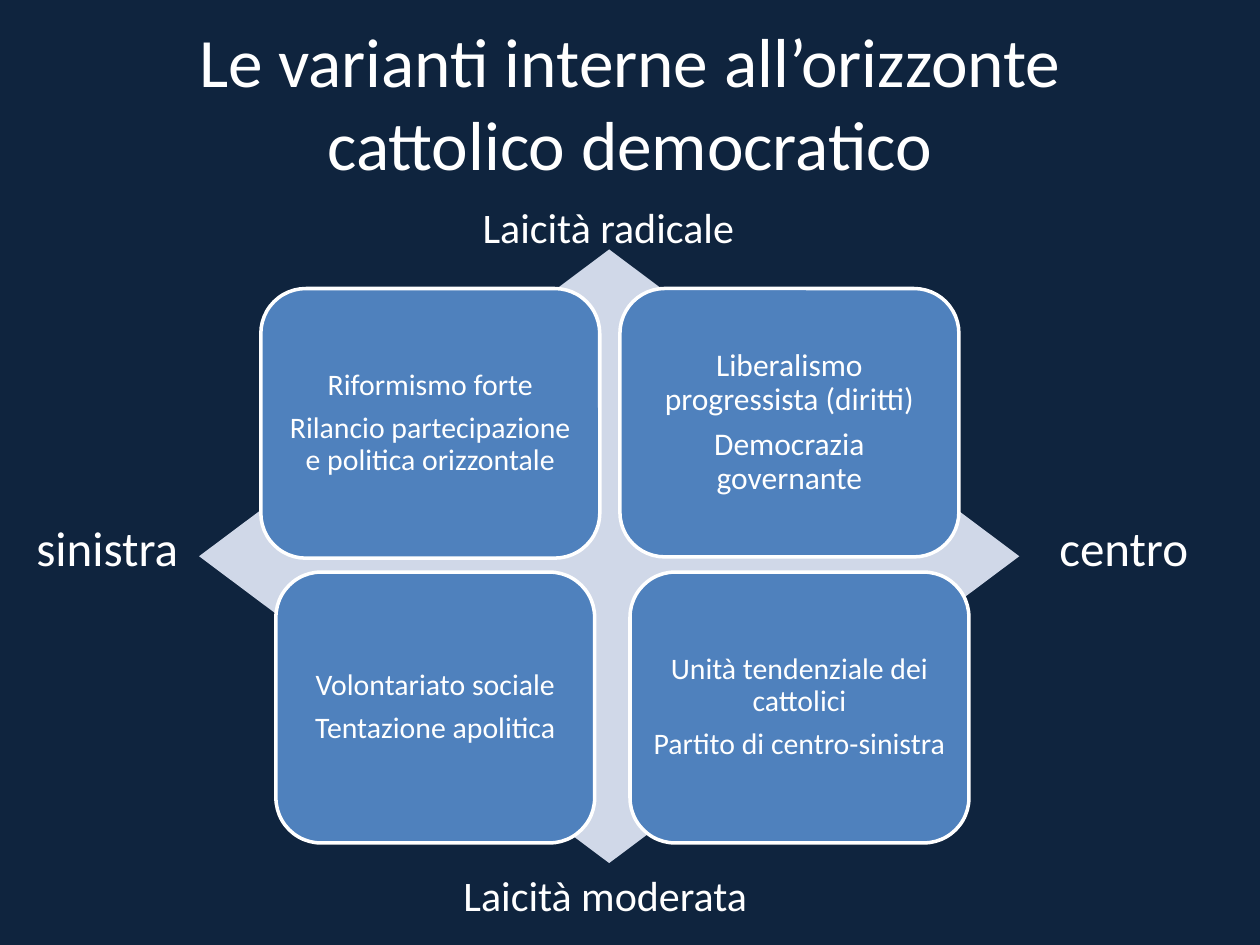
import pptx
import pptx.dml.color
import pptx.enum.shapes
import pptx.enum.text
import pptx.util

# The slide is a grid of square cells
COLUMNS, ROWS = 100, 75
CELL = pptx.util.Inches(0.1)

NAVY, WHITE, BLUE, PALE = "0F243E", "FFFFFF", "4F81BD", "D0D8E8"
FONT = "Calibri"
SHAPE = pptx.enum.shapes.MSO_SHAPE
CENTER = pptx.enum.text.PP_ALIGN.CENTER
MIDDLE = pptx.enum.text.MSO_ANCHOR.MIDDLE

# Quadrants: column, row, width, height, text size, paragraphs
QUADRANTS = [
    (49.2, 22.9, 26.9, 21.3, 18,
     ["Liberalismo progressista (diritti)", "Democrazia governante"]),
    (20.7, 22.9, 26.9, 21.4, 17,
     ["Riformismo forte", "Rilancio partecipazione e politica orizzontale"]),
    (50, 45.4, 26.9, 21.5, 17,
     ["Unità tendenziale dei cattolici", "Partito di centro-sinistra"]),
    (21.9, 45.4, 25.3, 21.5, 17,
     ["Volontariato sociale", "Tentazione apolitica"]),
]

# Axis ends: column, row, width, height, text size, left inset, text
AXIS_ENDS = [
    (1.9, 40.6, 13.4, 5.7, 28, 1, "sinistra"),
    (83.1, 40.6, 13.4, 5.7, 28, 1, "centro"),
    (35.8, 68.5, 28.3, 5, 24, 1, "Laicità moderata"),
    (28.7, 15.5, 37, 5, 24, 9.6, "Laicità radicale"),
]


def cells(*counts):
    return [round(n * CELL) for n in counts]


def paint(target, color):
    """Solid colour for a fill."""
    target.solid()
    target.fore_color.rgb = pptx.dml.color.RGBColor.from_string(color)


def style(p, size):
    p.font.name = FONT
    p.font.size = pptx.util.Pt(size)
    paint(p.font.fill, WHITE)


def add_title(s, text):
    title = s.shapes.title
    title.left, title.top, title.width, title.height = cells(5, 3, 90, 10.1)
    tf = title.text_frame
    tf.text = text
    tf.vertical_anchor = MIDDLE
    tf.paragraphs[0].alignment = CENTER
    style(tf.paragraphs[0], 39.6)


def add_figure(s, kind, box, color):
    sp = s.shapes.add_shape(kind, *cells(*box))
    sp.shadow.inherit = False
    paint(sp.fill, color)
    sp.line.fill.background()
    return sp


def add_quadrant(s, box, size, lines):
    sp = add_figure(s, SHAPE.ROUNDED_RECTANGLE, box, BLUE)
    paint(sp.line.fill, WHITE)
    sp.line.width = pptx.util.Pt(2)
    tf = sp.text_frame
    tf.word_wrap = True
    tf.vertical_anchor = MIDDLE
    inset, = cells(0.7)
    tf.margin_left = tf.margin_right = inset
    tf.margin_top = tf.margin_bottom = inset
    tf.text = "\n".join(lines)
    for p in tf.paragraphs:
        p.alignment = CENTER
        p.line_spacing = 0.9
        p.space_after = pptx.util.Pt(round(0.35 * size, 1))
        style(p, size)


def add_label(s, box, size, inset, text):
    tf = s.shapes.add_textbox(*cells(*box)).text_frame
    tf.word_wrap = True
    tf.margin_left, = cells(inset)
    tf.text = text
    style(tf.paragraphs[0], size)


def main():
    prs = pptx.Presentation()
    prs.slide_width, prs.slide_height = cells(COLUMNS, ROWS)
    s = prs.slides.add_slide(prs.slide_layouts[5])
    paint(s.background.fill, NAVY)
    add_title(s, "Le varianti interne all’orizzonte cattolico democratico")

    # Matrix: diamond behind four quadrants
    add_figure(s, SHAPE.DIAMOND, (15.8, 19.8, 65.1, 48.7), PALE)
    for *box, size, lines in QUADRANTS:
        add_quadrant(s, box, size, lines)

    # Names of the axis ends
    for *box, size, inset, text in AXIS_ENDS:
        add_label(s, box, size, inset, text)

    prs.save("out.pptx")


if __name__ == "__main__":
    main()
